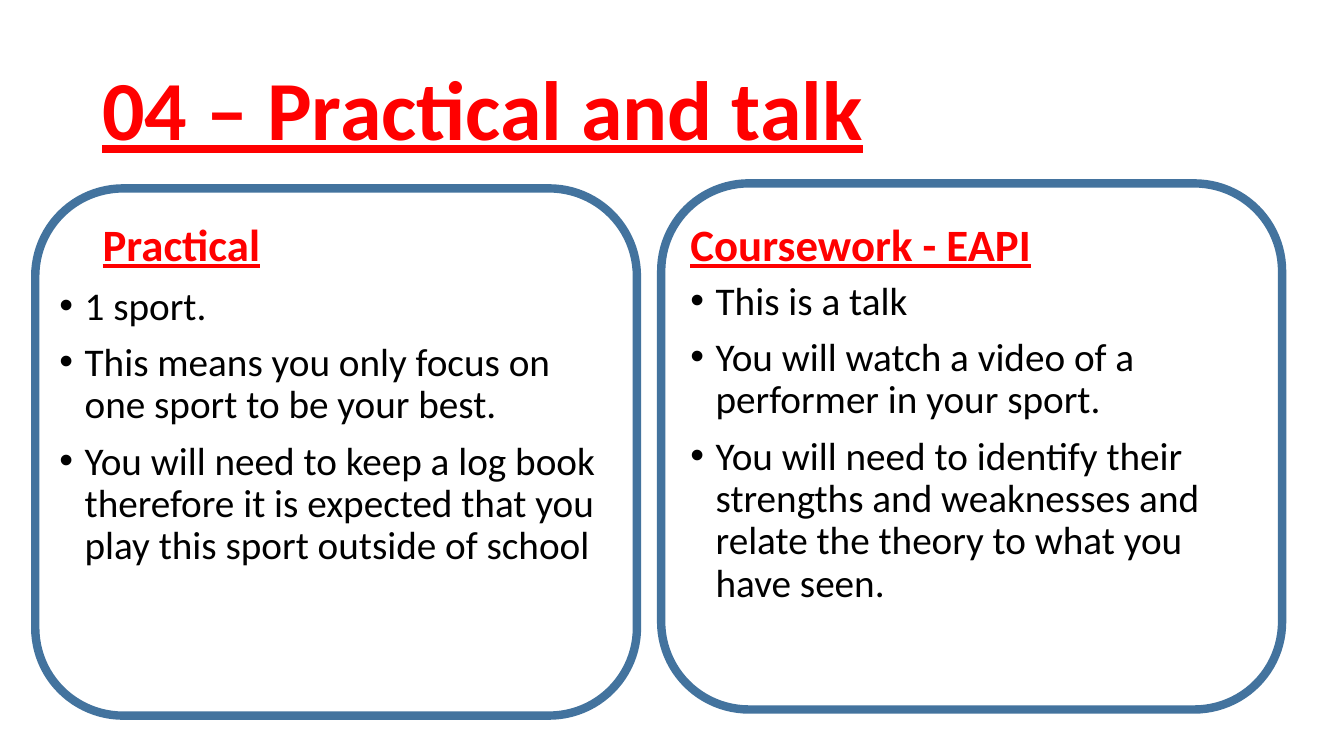
"""Build the slide "04 – Practical and talk" with two framed columns."""
from dataclasses import dataclass

from lxml import etree
from pptx import Presentation
from pptx.dml.color import RGBColor
from pptx.enum import shapes, text
from pptx.oxml import ns
from pptx.util import Pt

RED = RGBColor(0xFF, 0x00, 0x00)
BLACK = RGBColor(0x00, 0x00, 0x00)
FRAME_BLUE = RGBColor(0x43, 0x73, 0x9E)
FONT = "Calibri"
INDENT = 18
COMPARISON_LAYOUT = 4


@dataclass(frozen=True)
class Box:
    left: float
    top: float
    width: float
    height: float

    def lengths(self) -> tuple:
        return Pt(self.left), Pt(self.top), Pt(self.width), Pt(self.height)


@dataclass(frozen=True)
class Column:
    heading: str
    heading_index: int
    heading_box: Box
    points: tuple[str, ...]
    list_index: int
    list_box: Box
    frame_box: Box


COLUMNS = (
    Column(
        "Practical", 1, Box(66.1, 132.4, 406.2, 64.9),
        (
            "1 sport.",
            "This means you only focus on one sport to be your best.",
            "You will need to keep a log book therefore it is expected that you "
            "play this sport outside of school",
        ),
        2, Box(35.3, 200.9, 406.2, 290.1), Box(25.2, 134.6, 429.8, 376.6),
    ),
    Column(
        "Coursework - EAPI", 3, Box(486, 132.4, 408.2, 64.9),
        (
            "This is a talk",
            "You will watch a video of a performer in your sport.",
            "You will need to identify their strengths and weaknesses and "
            "relate the theory to what you have seen.",
        ),
        4, Box(486, 197.3, 408.2, 290.1), Box(472.3, 131, 443.5, 375.8),
    ),
)


def fill_placeholder(shape, box: Box, lines: tuple[str, ...], size: float,
                     color: RGBColor, anchor, space_before: float = 10,
                     heading: bool = True) -> None:
    shape.left, shape.top, shape.width, shape.height = box.lengths()
    frame = shape.text_frame
    frame.text = "\n".join(lines)
    frame.word_wrap = True
    frame.auto_size = text.MSO_AUTO_SIZE.NONE
    frame.vertical_anchor = anchor
    for paragraph in frame.paragraphs:
        paragraph.alignment = text.PP_ALIGN.LEFT
        paragraph.line_spacing = 0.9
        paragraph.space_before = Pt(space_before)
        font = paragraph.font
        font.name, font.size = FONT, Pt(size)
        font.bold = font.underline = heading
        font.color.rgb = color
        if not heading:
            add_bullet(paragraph)


def add_bullet(paragraph) -> None:
    properties = paragraph._p.get_or_add_pPr()
    properties.set("marL", str(Pt(INDENT)))
    properties.set("indent", str(-Pt(INDENT)))
    bullet_font = etree.Element(ns.qn("a:buFont"), typeface="Arial")
    bullet = etree.Element(ns.qn("a:buChar"), char="•")
    defaults = properties.find(ns.qn("a:defRPr"))
    defaults.addprevious(bullet_font)
    defaults.addprevious(bullet)


def add_frame(slide, box: Box) -> None:
    shape = slide.shapes.add_shape(
        shapes.MSO_SHAPE.ROUNDED_RECTANGLE, *box.lengths())
    shape.shadow.inherit = False
    shape.fill.background()
    shape.line.color.rgb = FRAME_BLUE
    shape.line.width = Pt(6)


def main() -> None:
    presentation = Presentation()
    presentation.slide_width, presentation.slide_height = Pt(960), Pt(540)
    slide = presentation.slides.add_slide(
        presentation.slide_layouts[COMPARISON_LAYOUT])
    placeholders = {shape.placeholder_format.idx: shape
                    for shape in slide.placeholders}
    fill_placeholder(placeholders[0], Box(66, 28.8, 828, 104.4),
                     ("04 – Practical and talk",), 60, RED,
                     text.MSO_ANCHOR.MIDDLE, space_before=0)
    for column in COLUMNS:
        fill_placeholder(placeholders[column.heading_index],
                         column.heading_box, (column.heading,), 32, RED,
                         text.MSO_ANCHOR.BOTTOM)
        fill_placeholder(placeholders[column.list_index], column.list_box,
                         column.points, 28, BLACK, text.MSO_ANCHOR.TOP,
                         heading=False)
    for column in COLUMNS:
        add_frame(slide, column.frame_box)
    presentation.save("out.pptx")


if __name__ == "__main__":
    main()
